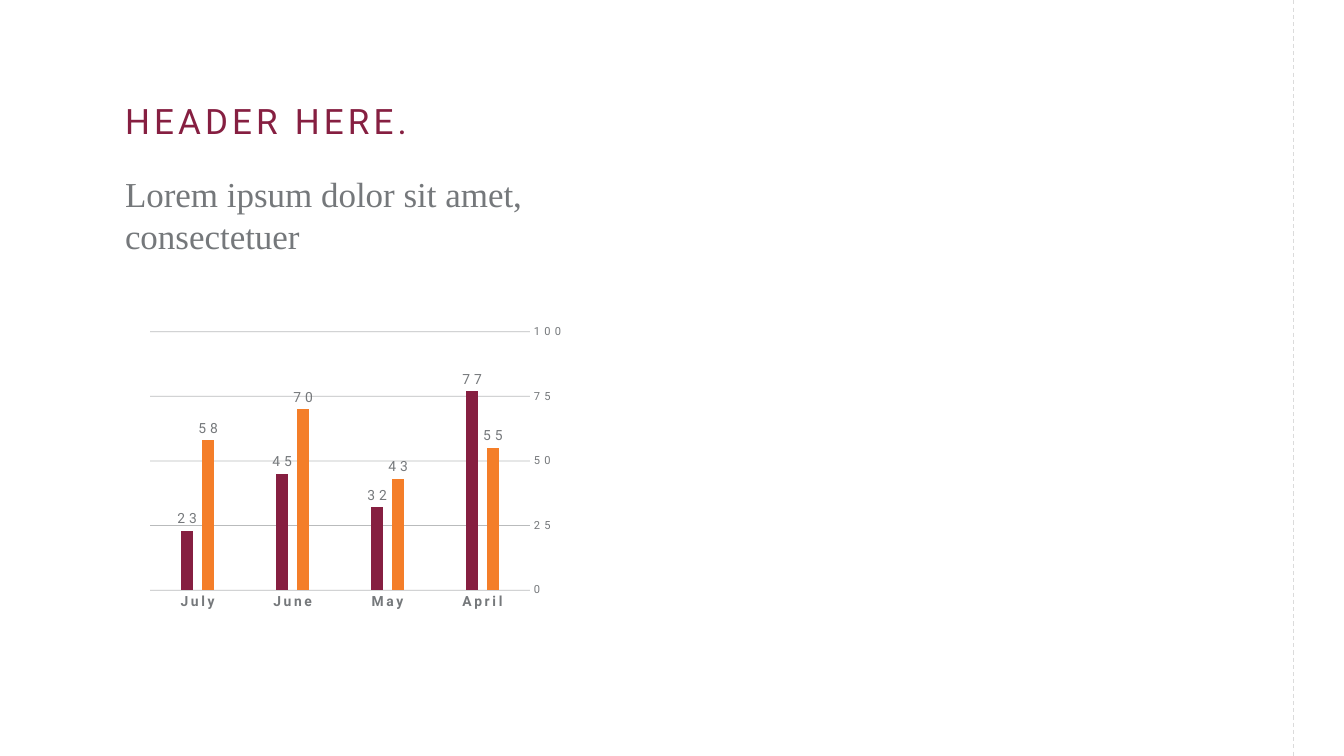
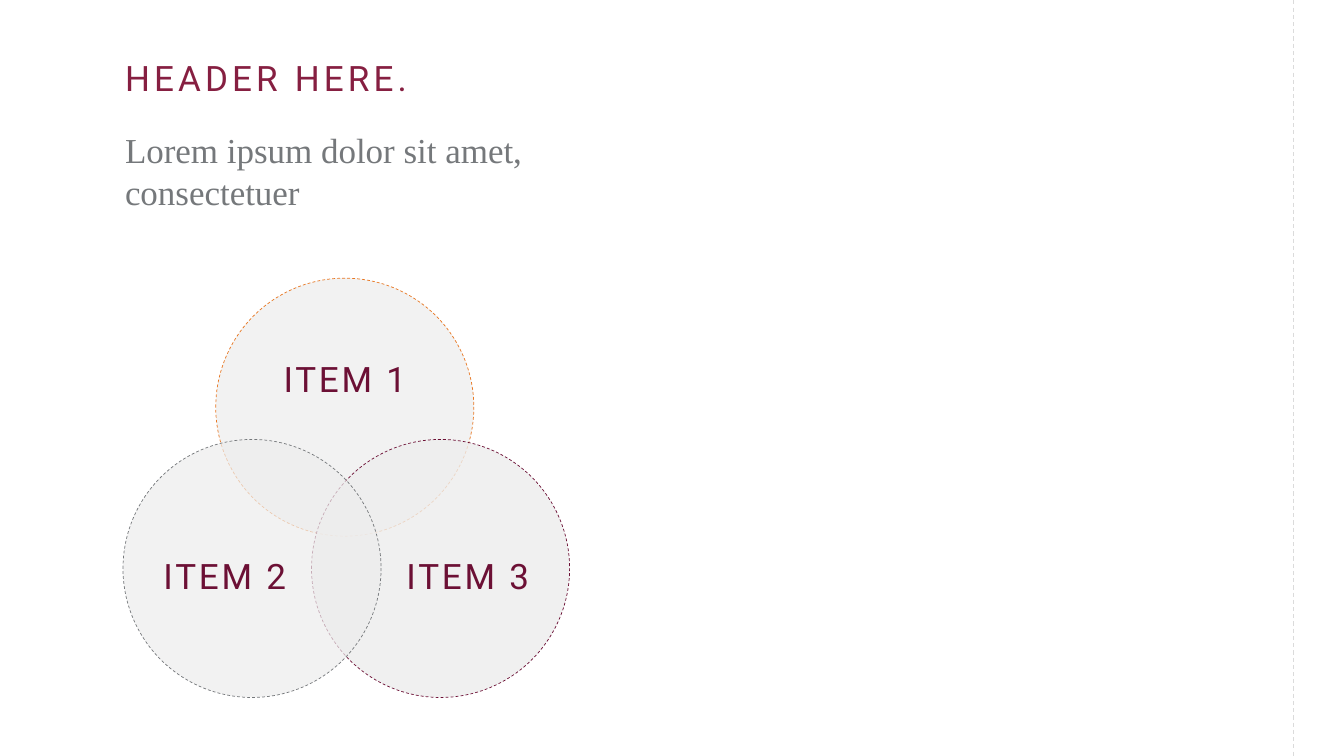
"""Build two slides: a column chart and a three-circle diagram."""
from lxml.etree import SubElement as Sub
from pptx import Presentation
from pptx.chart.data import CategoryChartData as Data
from pptx.dml.color import RGBColor
from pptx.enum.chart import XL_AXIS_CROSSES as Cross
from pptx.enum.chart import XL_CHART_TYPE as Kind
from pptx.enum.chart import XL_LABEL_POSITION as Pos
from pptx.enum.chart import XL_TICK_MARK as Tick
from pptx.enum.dml import MSO_LINE as Dash
from pptx.enum.shapes import MSO_CONNECTOR as Conn
from pptx.enum.shapes import MSO_SHAPE as Form
from pptx.enum.text import MSO_ANCHOR as Anchor
from pptx.enum.text import MSO_AUTO_SIZE as Fit
from pptx.enum.text import PP_ALIGN as Align
from pptx.oxml.ns import qn
from pptx.util import Inches, Pt

WINE = RGBColor(0x86, 0x1F, 0x41)
DARK = RGBColor(0x6C, 0x10, 0x35)
GRAY = RGBColor(0x75, 0x78, 0x7B)
PALE = RGBColor(0xED, 0xED, 0xED)
RULE = RGBColor(0xDB, 0xDB, 0xDB)
GOLD = RGBColor(0xF4, 0x7E, 0x29)
RUST = RGBColor(0xE8, 0x77, 0x22)
SANS = "Roboto"
SERIF = "Times New Roman"
LEFT = 1.19
WIDE = 4.46
ROUND = 2.56


def box(*nums):
    return [Inches(n) for n in nums]


def style(font, size, color, face=SANS, bold=False, gap=0):
    font.size = Pt(size)
    font.name = face
    font.bold = bold
    font.color.rgb = color
    if gap:
        font._element.set("spc", str(gap * 100))


def fade(root, part):
    for tint in root.iter(qn("a:srgbClr")):
        Sub(tint, qn("a:alpha")).set("val", str(part * 1000))


def stroke(line, color, width, dash=Dash.DASH):
    line.color.rgb = color
    line.width = Pt(width)
    line.dash_style = dash


def write(slide, text, area, size=25, color=WINE, face=SANS, gap=0,
          inset=0.05, center=False):
    frame = slide.shapes.add_textbox(*box(*area)).text_frame
    frame.word_wrap = True
    frame.margin_left = frame.margin_right = Inches(inset)
    frame.margin_top = frame.margin_bottom = Inches(inset)
    par = frame.paragraphs[0]
    if center:
        frame.vertical_anchor = Anchor.MIDDLE
        par.alignment = Align.CENTER
        par.line_spacing = 0.9
    else:
        frame.auto_size = Fit.SHAPE_TO_FIT_TEXT
    run = par.add_run()
    run.text = text
    style(run.font, size, color, face, gap=gap)


def frame(slide, top):
    write(slide, "HEADER HERE.", (LEFT, top, WIDE, 0.52), gap=3)
    write(slide, "Lorem ipsum dolor sit amet, consectetuer",
          (LEFT, top + 0.72, WIDE, 0.94), color=GRAY, face=SERIF)
    edge = slide.shapes.add_connector(
        Conn.STRAIGHT, *box(12.83, -0.57, 12.83, 8.07))
    stroke(edge.line, RULE, 0.75)
    Sub(edge._element.spPr, qn("a:effectLst"))


def place(chart, x, y, w, h):
    plot = chart._chartSpace.chart.plotArea
    for old in plot.findall(qn("c:layout")):
        plot.remove(old)
    outer = Sub(plot, qn("c:layout"))
    plot.insert(0, outer)
    inner = Sub(outer, qn("c:manualLayout"))
    pairs = [("layoutTarget", "inner"), ("xMode", "edge"), ("yMode", "edge"),
             ("x", x), ("y", y), ("w", w), ("h", h)]
    for tag, val in pairs:
        Sub(inner, qn("c:" + tag)).set("val", str(val))


def axes(chart):
    cat, val = chart.category_axis, chart.value_axis
    for axis in (cat, val):
        axis.major_tick_mark = axis.minor_tick_mark = Tick.NONE
        axis.format.line.fill.background()
    cat.reverse_order = True
    cat.crosses = Cross.MAXIMUM
    style(cat.tick_labels.font, 10, GRAY, bold=True, gap=2)
    val.minimum_scale, val.maximum_scale, val.major_unit = 0, 100, 25
    style(val.tick_labels.font, 8, GRAY, gap=3)
    grid = val.major_gridlines.format.line
    stroke(grid, GRAY, 0.5, Dash.SOLID)
    fade(val.major_gridlines._xAx.find(qn("c:majorGridlines")), 50)


def columns(slide):
    data = Data()
    data.categories = ["April", "May", "June", "July"]
    data.add_series("Series 1", (55, 43, 70, 58))
    data.add_series("Series 2", (77, 32, 45, 23))
    chart = slide.shapes.add_chart(
        Kind.COLUMN_CLUSTERED, *box(0.34, 2.08, 5.23, 5.09), data).chart
    chart.has_title = chart.has_legend = False
    style(chart.font, 10, WINE)
    plot = chart.plots[0]
    plot.vary_by_categories = False
    plot.gap_width, plot.overlap = 478, -64
    for row, color in zip(plot.series, (GOLD, WINE)):
        row.format.fill.solid()
        row.format.fill.fore_color.rgb = color
        tags = row.data_labels
        tags.show_value = True
        tags.position = Pos.OUTSIDE_END
        tags.number_format = "#,##0"
        tags.number_format_is_linked = False
        style(tags.font, 10, GRAY, gap=3)
    axes(chart)
    place(chart, 0.222, 0.238, 0.728, 0.504)


def circle(slide, text, spot, color, part, area):
    ring = slide.shapes.add_shape(Form.OVAL, *box(*spot, ROUND, ROUND))
    ring.shadow.inherit = False
    ring.fill.solid()
    ring.fill.fore_color.rgb = PALE
    fade(ring._element.spPr, part)
    stroke(ring.line, color, 0.5)
    write(slide, text, area, color=DARK, gap=2, inset=0, center=True)


def main():
    deck = Presentation()
    deck.slide_width, deck.slide_height = box(13.33, 7.5)
    blank = deck.slide_layouts[6]

    slide = deck.slides.add_slide(blank)
    columns(slide)
    frame(slide, 0.94)

    slide = deck.slides.add_slide(blank)
    low, size = 5.03, (1.54, 1.41)
    circle(slide, "ITEM 1", (2.14, 2.76), RUST, 70, (2.48, 3.21, 1.88, 1.15))
    circle(slide, "ITEM 3", (3.09, 4.36), DARK, 80, (3.87, low, *size))
    circle(slide, "ITEM 2", (1.22, 4.36), GRAY, 70, (1.46, low, *size))
    frame(slide, 0.51)
    deck.save("out.pptx")


if __name__ == "__main__":
    main()
